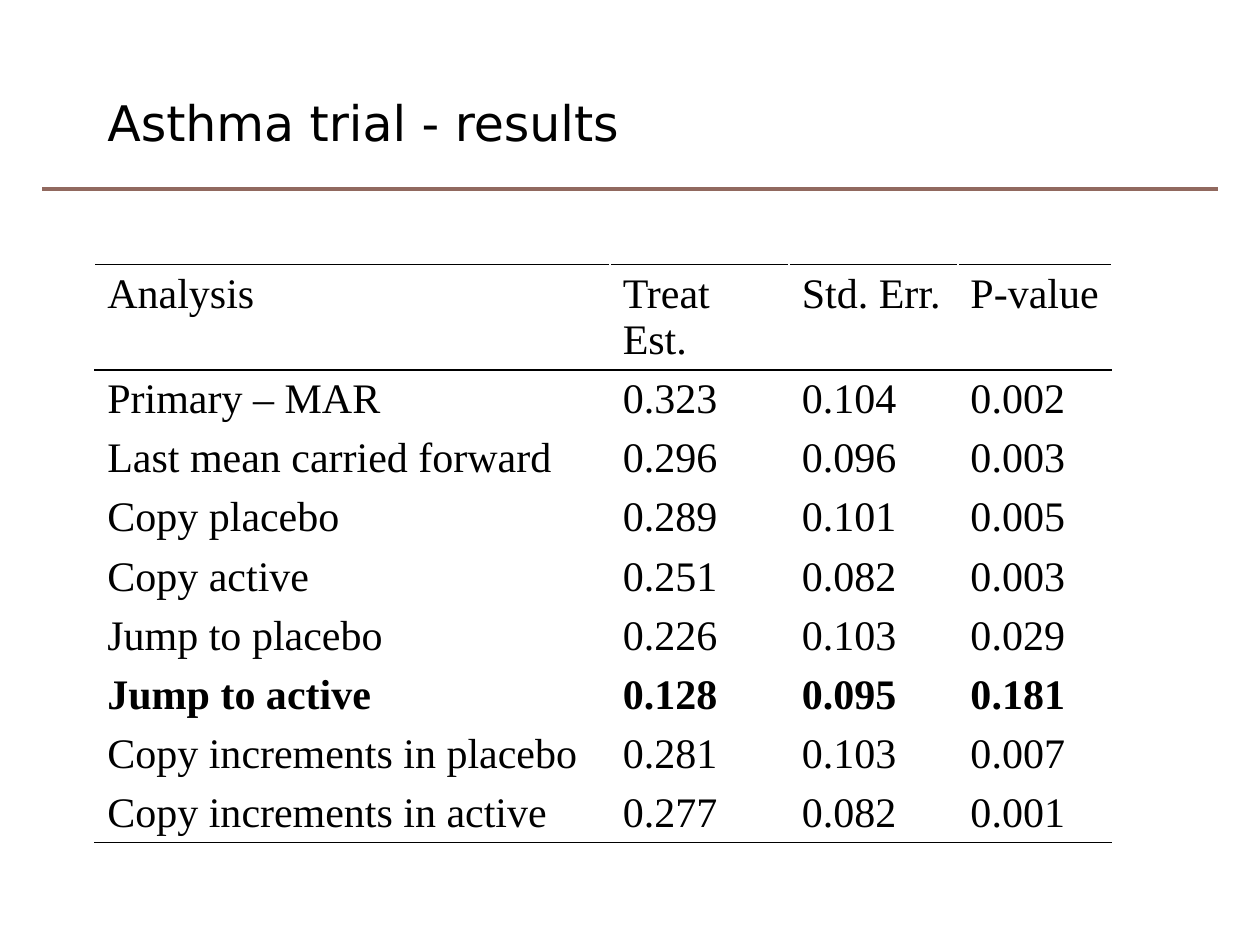
from dataclasses import dataclass

from lxml import etree
from pptx import Presentation
from pptx.dml.color import RGBColor
from pptx.enum.shapes import MSO_CONNECTOR
from pptx.enum.text import MSO_ANCHOR, MSO_AUTO_SIZE, PP_ALIGN
from pptx.oxml.ns import qn
from pptx.util import Cm, Pt

LEFT = PP_ALIGN.LEFT
MIDDLE, TOP = MSO_ANCHOR.MIDDLE, MSO_ANCHOR.TOP
NO_FIT = MSO_AUTO_SIZE.NONE
STRAIGHT = MSO_CONNECTOR.STRAIGHT


@dataclass(frozen=True)
class Theme:
    ink: str = "000000"
    paper: str = "FFFFFF"
    rule: str = "91695F"
    head_font: str = "DejaVu Sans"
    body_font: str = "Times New Roman"
    head_size: float = 28
    body_size: float = 24
    rule_width: float = 1.75
    edge_width: float = 1


@dataclass(frozen=True)
class Row:
    label: str
    est: str
    err: str
    p: str
    bold: bool = False
    above: bool = False
    below: bool = False
    height: float = 1.19

    def texts(self) -> tuple:
        return self.label, self.est, self.err, self.p


THEME = Theme()
WIDTHS = (10.39, 3.61, 3.4, 3.1)
ROWS = (
    Row("Analysis", "Treat Est.", "Std. Err.", "P-value",
        above=True, below=True, height=2.13),
    Row("Primary – MAR", "0.323", "0.104", "0.002", above=True),
    Row("Last mean carried forward", "0.296", "0.096", "0.003"),
    Row("Copy placebo", "0.289", "0.101", "0.005"),
    Row("Copy active", "0.251", "0.082", "0.003"),
    Row("Jump to placebo", "0.226", "0.103", "0.029"),
    Row("Jump to active", "0.128", "0.095", "0.181", bold=True),
    Row("Copy increments in placebo", "0.281", "0.103", "0.007"),
    Row("Copy increments in active", "0.277", "0.082", "0.001", below=True),
)


def add_run(para, text: str, font: str, size: float, bold: bool = False) -> None:
    para.alignment = LEFT
    run = para.add_run()
    run.text = text
    run.font.name = font
    run.font.size = Pt(size)
    run.font.bold = bold
    run.font.color.rgb = RGBColor.from_string(THEME.ink)


def set_edges(cell, row: Row) -> None:
    """Draw the four cell borders, which must come before the fill."""
    props = cell._tc.get_or_add_tcPr()
    edges = (("L", False), ("R", False), ("T", row.above), ("B", row.below))
    for spot, (side, dark) in enumerate(edges):
        line = etree.Element(qn(f"a:ln{side}"), w=str(Pt(THEME.edge_width)))
        fill = etree.SubElement(line, qn("a:solidFill"))
        tint = THEME.ink if dark else THEME.paper
        etree.SubElement(fill, qn("a:srgbClr"), val=tint)
        props.insert(spot, line)


def draw_cell(cell, text: str, row: Row) -> None:
    cell.vertical_anchor = TOP
    cell.fill.solid()
    cell.fill.fore_color.rgb = RGBColor.from_string(THEME.paper)
    set_edges(cell, row)
    add_run(cell.text_frame.paragraphs[0], text,
            THEME.body_font, THEME.body_size, row.bold)


def draw_rule(slide) -> None:
    line = slide.shapes.add_connector(
        STRAIGHT, Cm(0.85), Cm(3.81), Cm(24.55), Cm(3.81))
    line.line.color.rgb = RGBColor.from_string(THEME.rule)
    line.line.width = Pt(THEME.rule_width)
    etree.SubElement(line._element.spPr, qn("a:effectLst"))


def draw_table(slide) -> None:
    high = sum(row.height for row in ROWS)
    table = slide.shapes.add_table(
        len(ROWS), len(WIDTHS), Cm(1.91), Cm(5.33),
        Cm(sum(WIDTHS)), Cm(high)).table
    table.first_row = table.horz_banding = False
    for col, width in zip(table.columns, WIDTHS):
        col.width = Cm(width)
    for line, row in zip(table.rows, ROWS):
        line.height = Cm(row.height)
        for cell, text in zip(line.cells, row.texts()):
            draw_cell(cell, text, row)


def draw_title(slide, text: str) -> None:
    title = slide.shapes.title
    title.left, title.top = Cm(1.91), Cm(1.32)
    title.width, title.height = Cm(21.74), Cm(2.26)
    frame = title.text_frame
    frame.word_wrap = True
    frame.auto_size = NO_FIT
    frame.vertical_anchor = MIDDLE
    add_run(frame.paragraphs[0], text, THEME.head_font, THEME.head_size)


def main() -> None:
    deck = Presentation()
    deck.slide_width, deck.slide_height = Cm(25.4), Cm(19.05)
    slide = deck.slides.add_slide(deck.slide_layouts.get_by_name("Title Only"))

    # Heading and the rule beneath it
    draw_title(slide, "Asthma trial - results")
    draw_rule(slide)

    # Results by analysis
    draw_table(slide)
    deck.save("out.pptx")


if __name__ == "__main__":
    main()
